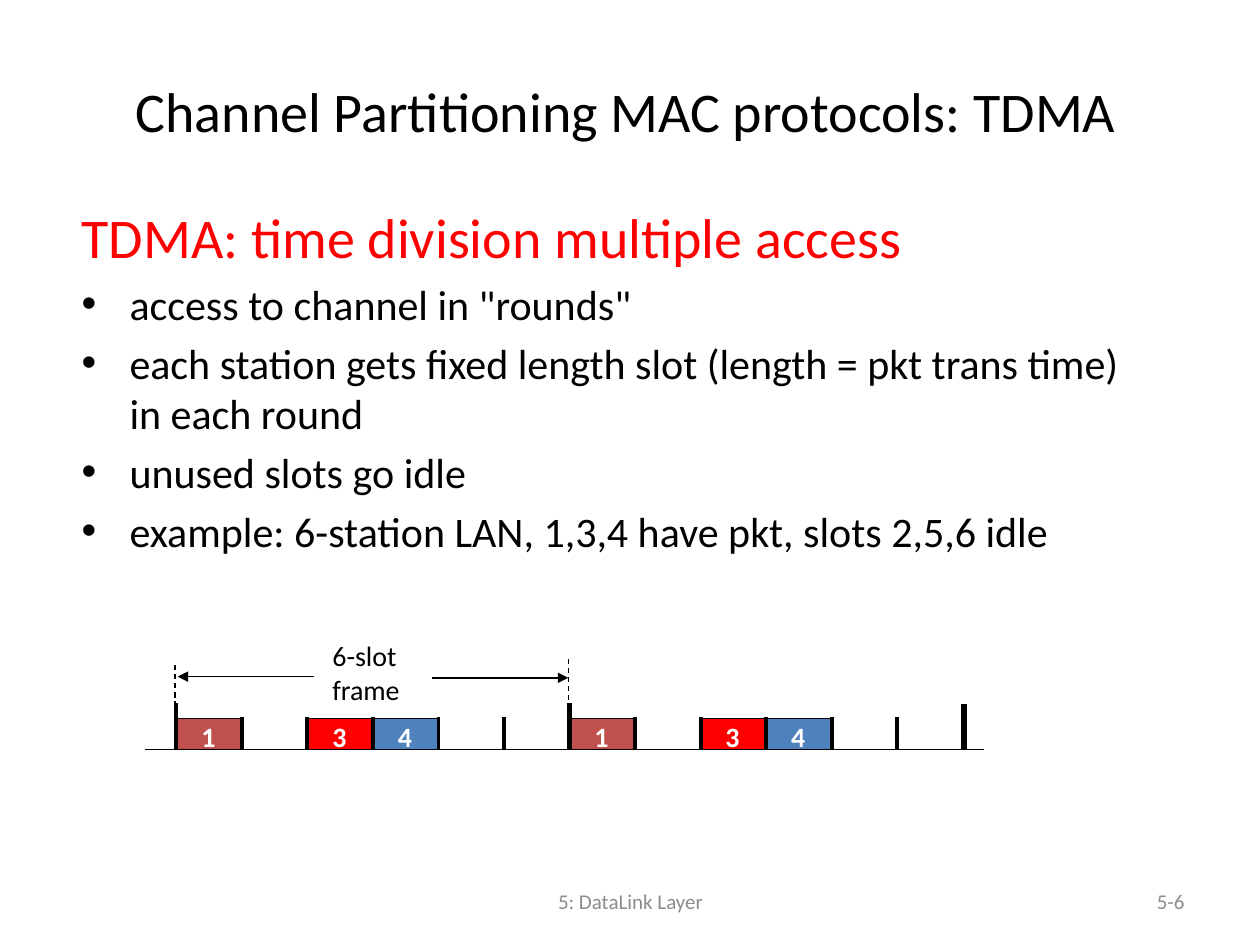
from dataclasses import dataclass
from lxml import etree
from pptx import Presentation, util as u
from pptx.dml.color import RGBColor
from pptx.enum import dml, shapes, text
from pptx.oxml.ns import qn


@dataclass(frozen=True)
class Theme:
    font: str = "Calibri"
    black: str = "000000"
    white: str = "FFFFFF"
    gray: str = "8C8C8C"
    red: str = "FF0000"
    brick: str = "C0504D"
    blue: str = "4F81BD"
    head: int = 32
    body: int = 24
    label: int = 16
    foot: int = 12
    thin: float = 0.75
    thick: float = 2.25
    heavy: float = 3


theme = Theme()
left, center, right = text.PP_ALIGN.LEFT, text.PP_ALIGN.CENTER, text.PP_ALIGN.RIGHT
top, middle = text.MSO_ANCHOR.TOP, text.MSO_ANCHOR.MIDDLE

deck = Presentation()
deck.slide_width, deck.slide_height = u.Inches(10), u.Inches(7.5)
slide = deck.slides.add_slide(deck.slide_layouts[6])


def write(box, words, size, color, align=left, anchor=top, wrap=True, bold=False):
    shape = slide.shapes.add_textbox(*[u.Inches(v) for v in box])
    frame = shape.text_frame
    frame.text = words
    frame.word_wrap = wrap
    frame.vertical_anchor = anchor
    for para in frame.paragraphs:
        para.alignment = align
        for run in para.runs:
            run.font.name, run.font.size, run.font.bold = theme.font, u.Pt(size), bold
            run.font.color.rgb = RGBColor.from_string(color)
    return frame


def rule(x1, y1, x2, y2, width=theme.thin, dash=False, arrow=False):
    ends = [u.Inches(v) for v in (x1, y1, x2, y2)]
    line = slide.shapes.add_connector(shapes.MSO_CONNECTOR.STRAIGHT, *ends)
    line.line.width = u.Pt(width)
    line.line.color.rgb = RGBColor.from_string(theme.black)
    if dash:
        line.line.dash_style = dml.MSO_LINE.DASH
    props = line._element.spPr
    if arrow:
        etree.SubElement(props.find(qn("a:ln")), qn("a:tailEnd"), type="triangle")
    etree.SubElement(props, qn("a:effectLst"))


# Footer and title
write((3.42, 6.95, 3.17, 0.4), "5: DataLink Layer", theme.foot, theme.gray, center, middle)
write((7.17, 6.95, 2.33, 0.4), "5-6", theme.foot, theme.gray, right, middle)
write((0.25, 0.25, 9.44, 1.25), "Channel Partitioning MAC protocols: TDMA",
      theme.head, theme.black, center, middle)

# Body: a red heading, then bullets
points = [
    "TDMA: time division multiple access",
    'access to channel in "rounds"',
    "each station gets fixed length slot (length = pkt trans time) in each round",
    "unused slots go idle",
    "example: 6-station LAN, 1,3,4 have pkt, slots 2,5,6 idle",
]
body = write((0.55, 1.56, 8.5, 3.2), "\n".join(points), theme.body, theme.black)
for i, para in enumerate(body.paragraphs):
    props = para._p.get_or_add_pPr()
    props.set("marL", str(u.Inches(0.38)))
    props.set("indent", str(-u.Inches(0.38)))
    space = etree.SubElement(props, qn("a:spcBef"))
    etree.SubElement(space, qn("a:spcPct"), val="20000")
    if i:
        etree.SubElement(props, qn("a:buFont"), typeface="Arial")
        etree.SubElement(props, qn("a:buChar"), char="•")
    else:
        etree.SubElement(props, qn("a:buNone"))
        font = para.runs[0].font
        font.size, font.color.rgb = u.Pt(theme.head), RGBColor.from_string(theme.red)

# Time line with two frames of six slots
slot, base, tall = 0.52, 5.95, 0.25
starts = (1.4, 4.52)
busy = {1: theme.brick, 3: theme.red, 4: theme.blue}
rule(1.15, base, 7.81, base)
for start, edge in zip(starts, (theme.thick, theme.heavy)):
    for num, color in busy.items():
        x = start + (num - 1) * slot
        box = [u.Inches(v) for v in (x, base - tall, slot, tall)]
        cell = slide.shapes.add_shape(shapes.MSO_SHAPE.RECTANGLE, *box)
        cell.shadow.inherit = False
        cell.fill.solid()
        cell.fill.fore_color.rgb = RGBColor.from_string(color)
        cell.line.color.rgb = RGBColor.from_string(theme.black)
        cell.line.width = u.Pt(theme.thin)
        write((x + 0.1, 5.66, 0.34, 0.37), str(num), theme.label, theme.white,
              wrap=False, bold=True)
    rule(start, 5.58, start, base, edge)
    for k in range(1, 6):
        x = start + k * slot
        rule(x, 5.69, x, base, theme.thick)
rule(7.65, 5.59, 7.65, base, theme.heavy)

# Frame length marker
write((2.54, 5.02, 0.83, 0.64), "6-slot\nframe", theme.label, theme.black, wrap=False)
rule(3.43, 5.38, 4.51, 5.38, arrow=True)
rule(2.49, 5.37, 1.41, 5.37, arrow=True)
for x, y in ((1.39, 5.28), (4.51, 5.23)):
    rule(x, y, x, y + 0.33, dash=True)

deck.save("out.pptx")
